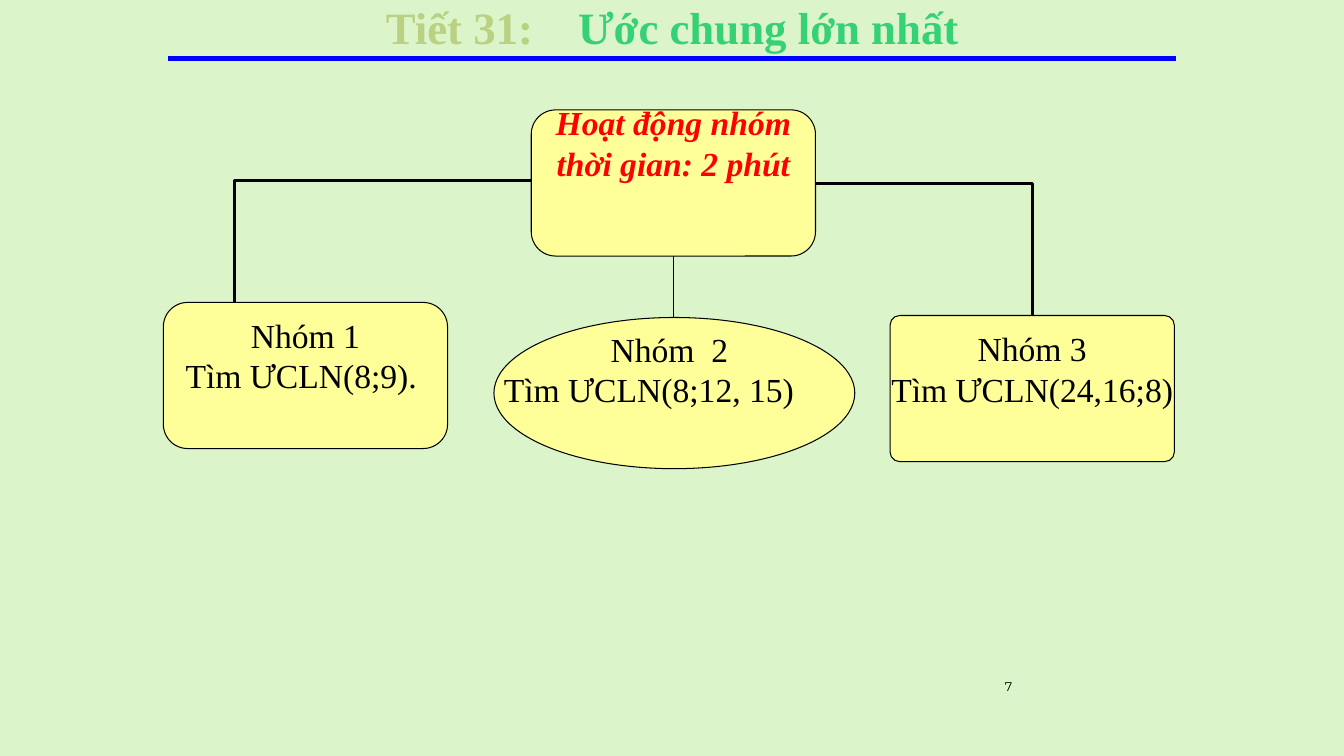
from dataclasses import dataclass

from pptx import Presentation
from pptx.dml.color import RGBColor
from pptx.enum.shapes import MSO_CONNECTOR, MSO_SHAPE
from pptx.enum.text import MSO_ANCHOR, PP_ALIGN
from pptx.oxml.ns import qn
from pptx.oxml.xmlchemy import OxmlElement
from pptx.util import Inches, Pt

LINE, ELBOW = MSO_CONNECTOR.STRAIGHT, MSO_CONNECTOR.ELBOW
ROUND, OVAL = MSO_SHAPE.ROUNDED_RECTANGLE, MSO_SHAPE.OVAL
LEFT, MID, RIGHT = PP_ALIGN.LEFT, PP_ALIGN.CENTER, PP_ALIGN.RIGHT
TOP, CENTER = MSO_ANCHOR.TOP, MSO_ANCHOR.MIDDLE

# Grid: square cells, a tenth of an inch wide
COLS, ROWS = 133.33, 75
CELL = Inches(0.1)
BOX_W, BOX_H = 28.2, 14.5
TEXT_ROW = 4  # height of one 24 pt line

SERIF, SANS = "Times New Roman", "Montserrat"
BLACK, RED, BLUE, CREAM = "000000", "FF0000", "0000FF", "FFFF99"
OLIVE, GREEN, MINT = "B9D181", "34D274", "DBF4CA"


@dataclass
class Box:
    col: float
    row: float
    lines: list[str]
    round: float = 0.167
    lift: int = 1  # free text rows kept at the bottom
    color: str = BLACK
    strong: bool = False


@dataclass
class Link:
    kind: int
    start: tuple[float, float]
    end: tuple[float, float]
    width: float
    color: str = BLACK


BOXES = [
    Box(52.7, 10.9, ["Hoạt động nhóm", "thời gian: 2 phút"],
        lift=2, color=RED, strong=True),
    Box(16.2, 30, ["Nhóm 1", "Tìm ƯCLN(8;9). "]),
    Box(88.3, 31.3, ["Nhóm 3", "Tìm ƯCLN(24,16;8)"], round=0.066),
]
LINKS = [
    Link(LINE, (66.8, 25.3), (66.8, 32.8), 0.75),
    Link(LINE, (16.7, 5.8), (116.7, 5.8), 3, BLUE),
    Link(ELBOW, (80.9, 18.2), (102.4, 31.3), 2.25),
    Link(ELBOW, (57.5, 17.9), (23.3, 36.1), 2.25),
]


def grid(*cells: float) -> list[int]:
    return [round(c * CELL) for c in cells]


def paint(target, color: str) -> None:
    """Give a fill a solid colour."""
    target.solid()
    target.fore_color.rgb = RGBColor.from_string(color)


def style(run, size: float, color: str, bold=False, slant=False, face=SERIF) -> None:
    font = run.font
    font.name, font.size = face, Pt(size)
    font.bold, font.italic = bold, slant
    font.color.rgb = RGBColor.from_string(color)


def write(frame, lines: list[str], aligns: list, **look) -> None:
    frame.text = "\n".join(lines)
    for par, align in zip(frame.paragraphs, aligns):
        par.alignment = align
        for run in par.runs:
            style(run, **look)


def label(slide, col: float, row: float, wide: float, high: float, anchor=TOP):
    frame = slide.shapes.add_textbox(*grid(col, row, wide, high)).text_frame
    frame.word_wrap, frame.vertical_anchor = True, anchor
    return frame


def panel(slide, kind: int, *place: float):
    shape = slide.shapes.add_shape(kind, *grid(*place))
    shape.shadow.inherit = False
    paint(shape.fill, CREAM)
    paint(shape.line.fill, BLACK)
    shape.line.width = Pt(0.75)
    return shape


def draw_box(slide, box: Box) -> None:
    shape = panel(slide, ROUND, box.col, box.row, BOX_W, BOX_H)
    shape.adjustments[0] = box.round
    frame = shape.text_frame
    frame.word_wrap, frame.vertical_anchor = False, CENTER
    frame.margin_left = frame.margin_right = frame.margin_top = 0
    frame.margin_bottom = box.lift * TEXT_ROW * CELL
    write(frame, box.lines, [MID, MID], size=24, color=box.color,
          bold=box.strong, slant=box.strong)


def draw_link(slide, link: Link) -> None:
    wire = slide.shapes.add_connector(link.kind, *grid(*link.start, *link.end))
    paint(wire.line.fill, link.color)
    wire.line.width = Pt(link.width)
    props = wire._element.spPr
    props.append(OxmlElement("a:effectLst"))
    if link.kind == ELBOW:  # one corner only
        props.find(qn("a:prstGeom")).set("prst", "bentConnector2")


def draw_title(slide) -> None:
    frame = label(slide, 16.7, 0, 100, 5.5)
    frame.margin_top = 0
    par = frame.paragraphs[0]
    par.alignment = MID
    for text, color in [("Tiết 31:", OLIVE), (" ", OLIVE),
                        ("Ước chung lớn nhất", GREEN)]:
        run = par.add_run()
        run.text = text
        style(run, 32, color, bold=True)
        if text == " ":  # widen the gap by tracking
            run.font._element.set("spc", "2400")


def main() -> None:
    deck = Presentation()
    deck.slide_width, deck.slide_height = grid(COLS, ROWS)
    slide = deck.slides.add_slide(deck.slide_layouts[6])
    paint(slide.background.fill, MINT)

    # Title and page number
    draw_title(slide)
    write(label(slide, 93.9, 66.1, 7.5, 4, CENTER), ["7"], [RIGHT],
          size=9, color=BLACK, face=SANS)

    # Links lie behind the boxes
    for link in LINKS:
        draw_link(slide, link)
    for box in BOXES:
        draw_box(slide, box)

    # Middle group
    panel(slide, OVAL, 49, 31.5, 35.8, 15)
    write(label(slide, 49, 32.1, 34.8, 9.1),
          ["Nhóm  2", "Tìm ƯCLN(8;12, 15)"], [MID, LEFT], size=24, color=BLACK)

    deck.save("out.pptx")


if __name__ == "__main__":
    main()
